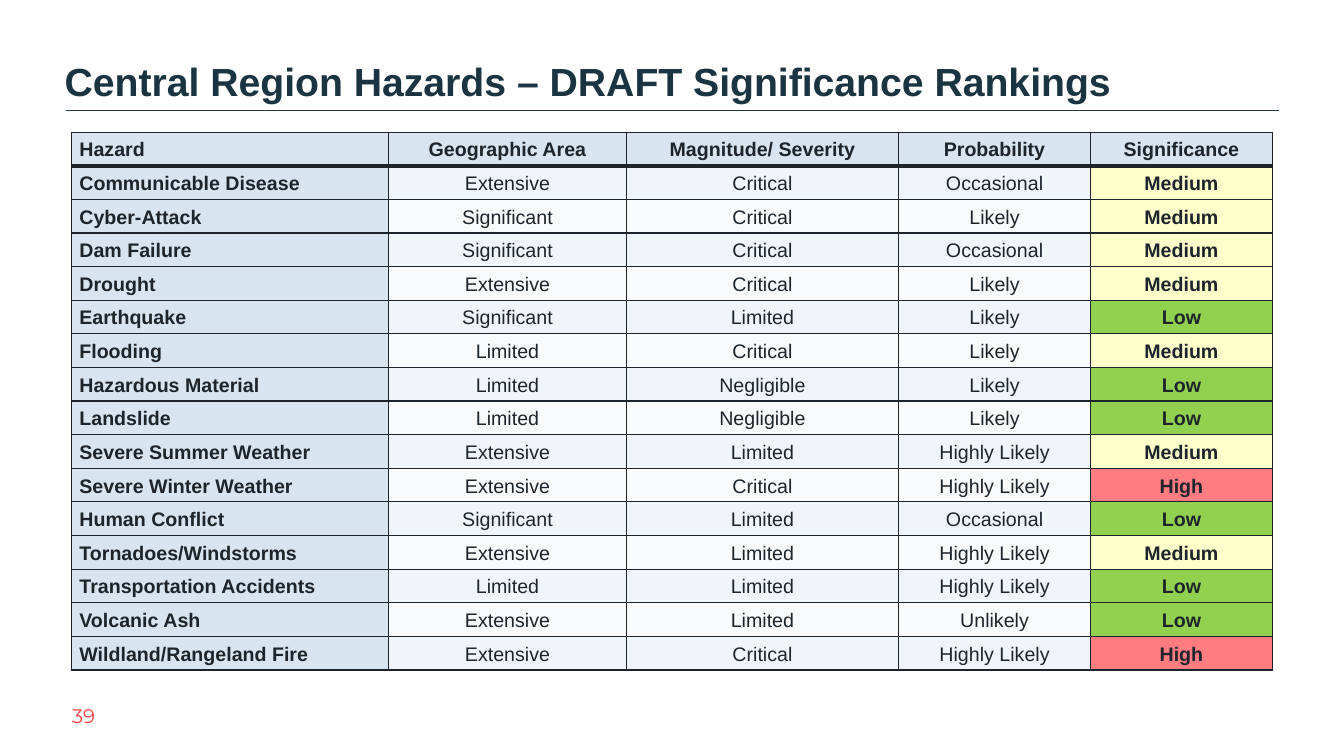
from dataclasses import dataclass

from lxml.etree import SubElement
from pptx import Presentation
from pptx.dml.color import RGBColor
from pptx.enum.shapes import MSO_CONNECTOR
from pptx.enum.text import MSO_ANCHOR, PP_ALIGN
from pptx.oxml.ns import qn
from pptx.util import Cm, Pt


@dataclass(frozen=True)
class Theme:
    font: str = "Arial"
    number_font: str = "Montserrat"
    title_size: int = 28
    body_size: int = 14
    title: str = "1A3441"
    rule: str = "233845"
    number: str = "F7413A"
    ink: str = "1D242B"
    heading_fill: str = "D8E5F0"
    band_fills: tuple = ("F0F5F9", "F8FAFC")


theme = Theme()
RATING_FILLS = {"Low": "92D050", "Medium": "FFFFCC", "High": "FF7C80"}
HEADINGS = ("Hazard", "Geographic Area", "Magnitude/ Severity", "Probability", "Significance")
HAZARDS = [
    ("Communicable Disease", "Extensive", "Critical", "Occasional", "Medium"),
    ("Cyber-Attack", "Significant", "Critical", "Likely", "Medium"),
    ("Dam Failure", "Significant", "Critical", "Occasional", "Medium"),
    ("Drought", "Extensive", "Critical", "Likely", "Medium"),
    ("Earthquake", "Significant", "Limited", "Likely", "Low"),
    ("Flooding", "Limited", "Critical", "Likely", "Medium"),
    ("Hazardous Material", "Limited", "Negligible", "Likely", "Low"),
    ("Landslide", "Limited", "Negligible", "Likely", "Low"),
    ("Severe Summer Weather", "Extensive", "Limited", "Highly Likely", "Medium"),
    ("Severe Winter Weather", "Extensive", "Critical", "Highly Likely", "High"),
    ("Human Conflict", "Significant", "Limited", "Occasional", "Low"),
    ("Tornadoes/Windstorms", "Extensive", "Limited", "Highly Likely", "Medium"),
    ("Transportation Accidents", "Limited", "Limited", "Highly Likely", "Low"),
    ("Volcanic Ash", "Extensive", "Limited", "Unlikely", "Low"),
    ("Wildland/Rangeland Fire", "Extensive", "Critical", "Highly Likely", "High"),
]
COLUMN_WIDTHS = (7.98, 6.0, 6.85, 4.85, 4.57)
TABLE_HEIGHT = 13.56


def write(text_frame, text, size, color, font=theme.font, bold=False, align=PP_ALIGN.LEFT):
    """Set a single paragraph and format its run."""
    text_frame.text = text
    paragraph = text_frame.paragraphs[0]
    paragraph.alignment = align
    style = paragraph.runs[0].font
    style.name, style.size, style.bold = font, Pt(size), bold
    style.color.rgb = RGBColor.from_string(color)
    return paragraph


def add_borders(cell, widths):
    """Draw the cell's sides; they must precede its fill in the XML."""
    properties = cell._tc.get_or_add_tcPr()
    for side, width in widths.items():
        line = SubElement(properties, qn(f"a:{side}"), w=str(Pt(width)))
        fill = SubElement(line, qn("a:solidFill"))
        SubElement(fill, qn("a:srgbClr"), val=theme.ink)


presentation = Presentation()
presentation.slide_width, presentation.slide_height = Cm(33.87), Cm(19.05)
slide = presentation.slides.add_slide(presentation.slide_layouts[6])

# Page number
number_frame = slide.shapes.add_textbox(Cm(0), Cm(17.53), Cm(4.22), Cm(1.02)).text_frame
number_frame.word_wrap = True
number_frame.vertical_anchor = MSO_ANCHOR.MIDDLE
write(number_frame, "39", theme.body_size, theme.number, theme.number_font, align=PP_ALIGN.CENTER)

# Title and the rule under it
rule = slide.shapes.add_connector(MSO_CONNECTOR.STRAIGHT, Cm(1.66), Cm(2.79), Cm(32.23), Cm(2.79))
rule.line.color.rgb = RGBColor.from_string(theme.rule)
rule.line.width = Pt(0.5)
SubElement(rule._element.spPr, qn("a:effectLst"))

title_frame = slide.shapes.add_textbox(Cm(1.63), Cm(0.71), Cm(27.36), Cm(1.93)).text_frame
title_frame.word_wrap = True
title_frame.vertical_anchor = MSO_ANCHOR.BOTTOM
title_frame.margin_left = title_frame.margin_right = 0
title_frame.margin_top = title_frame.margin_bottom = 0
title = write(title_frame, "Central Region Hazards – DRAFT Significance Rankings",
              theme.title_size, theme.title, bold=True)
title.line_spacing = 1.2
title.space_before = Pt(10)

# Ranking table
rows = [HEADINGS, *HAZARDS]
table = slide.shapes.add_table(len(rows), len(HEADINGS), Cm(1.81), Cm(3.33),
                               Cm(sum(COLUMN_WIDTHS)), Cm(TABLE_HEIGHT)).table
for column, width in zip(table.columns, COLUMN_WIDTHS):
    column.width = Cm(width)

for row_index, values in enumerate(rows):
    table.rows[row_index].height = Cm(TABLE_HEIGHT / len(rows))
    for column_index, value in enumerate(values):
        cell = table.cell(row_index, column_index)
        is_heading = row_index == 0 or column_index == 0
        is_rating = value in RATING_FILLS

        # The line between header and body is heavier
        add_borders(cell, {"lnL": 1, "lnR": 1,
                           "lnT": 3 if row_index == 1 else 1,
                           "lnB": 3 if row_index == 0 else 1})
        band_fill = theme.band_fills[(row_index - 1) % 2]
        fill = theme.heading_fill if is_heading else RATING_FILLS.get(value, band_fill)
        cell.fill.solid()
        cell.fill.fore_color.rgb = RGBColor.from_string(fill)

        cell.vertical_anchor = MSO_ANCHOR.MIDDLE
        cell.margin_left = cell.margin_right = Cm(0.19)
        cell.margin_top = cell.margin_bottom = 0
        paragraph = write(cell.text_frame, value, theme.body_size, theme.ink,
                          bold=is_heading or is_rating,
                          align=PP_ALIGN.CENTER if column_index else PP_ALIGN.LEFT)
        paragraph.line_spacing = 1.1
        paragraph.space_after = Pt(6)

presentation.save("out.pptx")
